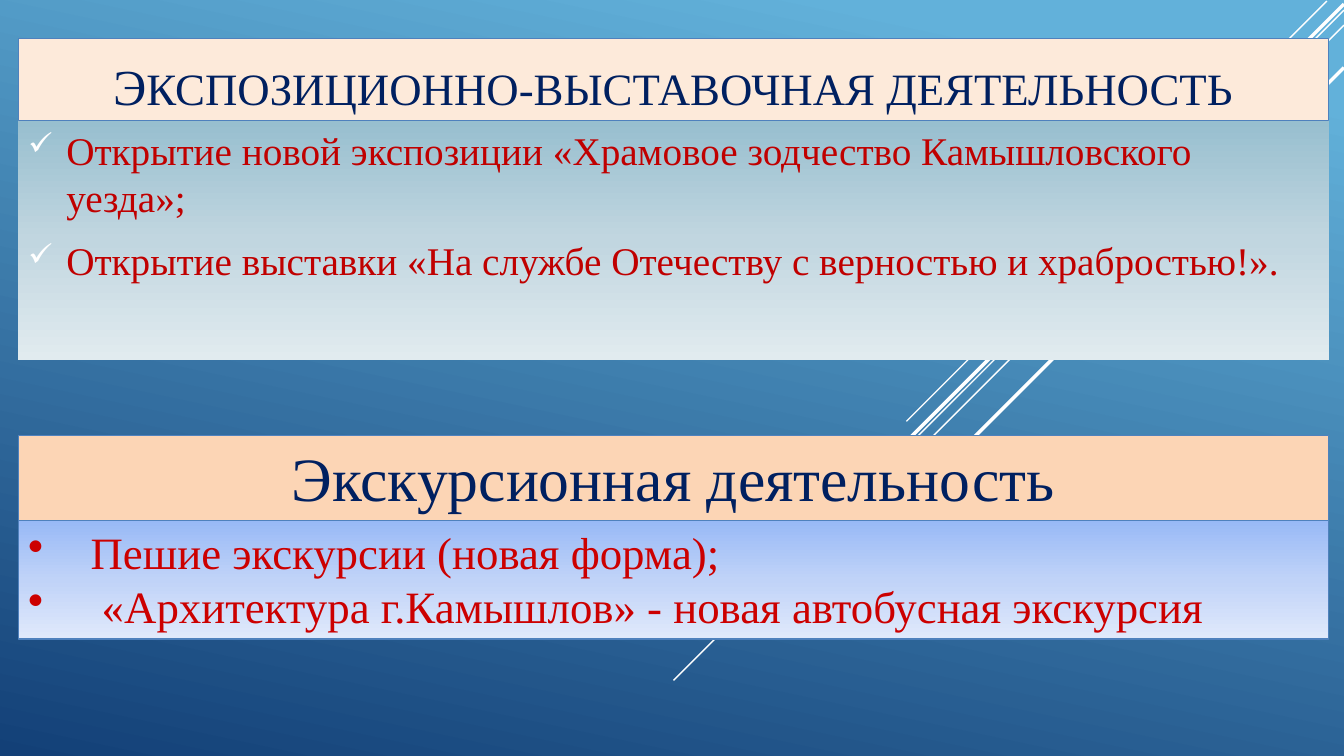
from dataclasses import dataclass

from lxml import etree
from pptx import Presentation
from pptx.dml.color import RGBColor
from pptx.enum.shapes import MSO_CONNECTOR, MSO_SHAPE
from pptx.enum.text import MSO_ANCHOR, PP_ALIGN
from pptx.oxml.ns import qn
from pptx.util import Inches, Pt

RECTANGLE = MSO_SHAPE.RECTANGLE
STRAIGHT = MSO_CONNECTOR.STRAIGHT
TOP, BOTTOM = MSO_ANCHOR.TOP, MSO_ANCHOR.BOTTOM
LEFT, CENTER = PP_ALIGN.LEFT, PP_ALIGN.CENTER

Stops = tuple[tuple[int, str], ...]


@dataclass(frozen=True)
class Theme:
    font: str = "Times New Roman"
    white: str = "FFFFFF"
    navy: str = "002060"
    dark_red: str = "C00000"
    red: str = "CC0000"
    border: str = "4F81BD"
    cream: Stops = ((0, "FDEADA"),)
    peach: Stops = ((0, "FCD5B5"),)
    teal: Stops = ((0, "98BFCF"), (50, "C1D6E0"), (100, "E1EBEF"))
    blue: Stops = ((0, "98B9F6"), (50, "C0D3F8"), (100, "E0E9FB"))
    backdrop: Stops = ((10, "62B1DA"), (100, "134077"))
    small: float = 28
    medium: float = 32
    initial: float = 36
    large: float = 44


THEME = Theme()


@dataclass(frozen=True)
class Ray:
    """A diagonal that falls to the left at 45 degrees."""
    x: float
    y: float
    run: float
    weight: float


@dataclass(frozen=True)
class Span:
    text: str
    size: float


@dataclass(frozen=True)
class Bullet:
    mark: str
    indent: float
    color: str
    percent: int = 100


@dataclass(frozen=True)
class Panel:
    top: float
    height: float
    fill: Stops
    color: str
    paragraphs: tuple[tuple[Span, ...], ...]
    border: bool = True
    anchor: MSO_ANCHOR = TOP
    align: PP_ALIGN = LEFT
    bullet: Bullet | None = None
    before: float = 0
    after: float = 0


PANEL_LEFT, PANEL_WIDTH = 0.18, 13

RAYS = (
    Ray(13.16, 0.01, 4.17, 1),
    Ray(13.33, 0.1, 6.65, 1),
    Ray(13.33, 0.25, 5.42, 1),
    Ray(13.33, 0.04, 5.3, 2.5),
    Ray(13.33, 0.67, 4.75, 2.5),
)

PANELS = (
    Panel(0.38, 0.82, THEME.cream, THEME.navy,
          ((Span("Э", THEME.initial),
            Span("КСПОЗИЦИОННО-ВЫСТАВОЧНАЯ ДЕЯТЕЛЬНОСТЬ", THEME.medium)),),
          anchor=BOTTOM, align=CENTER),
    Panel(1.2, 2.37, THEME.teal, THEME.dark_red,
          ((Span("Открытие новой экспозиции «Храмовое зодчество "
                 "Камышловского уезда»;", THEME.small),),
           (Span("Открытие выставки «На службе Отечеству с верностью "
                 "и храбростью!».", THEME.small),)),
          border=False, bullet=Bullet("✓", 0.38, THEME.white, 80),
          before=5.6, after=6),
    Panel(4.32, 0.84, THEME.peach, THEME.navy,
          ((Span("Экскурсионная деятельность", THEME.large),),),
          align=CENTER),
    Panel(5.16, 1.18, THEME.blue, THEME.red,
          ((Span("Пешие экскурсии (новая форма);", THEME.medium),),
           (Span(" «Архитектура г.Камышлов» - новая автобусная экскурсия",
                 THEME.medium),)),
          bullet=Bullet("•", 0.62, THEME.red)),
)


def rgb(color: str) -> RGBColor:
    return RGBColor.from_string(color)


def add_node(parent, tag: str, **attributes: str):
    return etree.SubElement(parent, qn(tag), attributes)


def paint(fill, element, stops: Stops, angle: float) -> None:
    """Fill with one colour, or with a gradient at a clockwise angle."""
    if len(stops) == 1:
        fill.solid()
        fill.fore_color.rgb = rgb(stops[0][1])
        return
    fill.gradient()
    fill.gradient_angle = 360 - angle
    stop_list = next(element.iter(qn("a:gsLst")))
    for old_stop in list(stop_list):
        stop_list.remove(old_stop)
    for position, color in stops:
        stop = add_node(stop_list, "a:gs", pos=str(position * 1000))
        add_node(stop, "a:srgbClr", val=color)


def draw_ray(page, ray: Ray) -> None:
    line = page.shapes.add_connector(
        STRAIGHT, Inches(ray.x), Inches(ray.y),
        Inches(ray.x - ray.run), Inches(ray.y + ray.run))
    line.line.color.rgb = rgb(THEME.white)
    line.line.width = Pt(ray.weight)
    add_node(line._element.spPr, "a:effectLst")


def set_bullet(para, bullet: Bullet) -> None:
    properties = para._p.get_or_add_pPr()
    properties.set("marL", str(Inches(bullet.indent)))
    properties.set("indent", str(-Inches(bullet.indent)))
    color = add_node(properties, "a:buClr")
    add_node(color, "a:srgbClr", val=bullet.color)
    add_node(properties, "a:buSzPct", val=str(bullet.percent * 1000))
    add_node(properties, "a:buChar", char=bullet.mark)


def write_paragraph(para, spans: tuple[Span, ...], panel: Panel) -> None:
    if panel.bullet:
        set_bullet(para, panel.bullet)
    para.alignment = panel.align
    para.space_before, para.space_after = Pt(panel.before), Pt(panel.after)
    para.font.name = THEME.font
    para.font.color.rgb = rgb(panel.color)
    para.font.size = Pt(spans[-1].size)
    for span in spans:
        run = para.add_run()
        run.text = span.text
        if span.size != spans[-1].size:
            run.font.size = Pt(span.size)


def draw_panel(page, panel: Panel) -> None:
    box = page.shapes.add_shape(
        RECTANGLE, Inches(PANEL_LEFT), Inches(panel.top),
        Inches(PANEL_WIDTH), Inches(panel.height))
    box.shadow.inherit = False
    paint(box.fill, box._element, panel.fill, 90)
    if panel.border:
        box.line.color.rgb = rgb(THEME.border)
        box.line.width = Pt(0.75)
    else:
        box.line.fill.background()
    frame = box.text_frame
    frame.word_wrap = True
    frame.vertical_anchor = panel.anchor
    for number, spans in enumerate(panel.paragraphs):
        para = frame.add_paragraph() if number else frame.paragraphs[0]
        write_paragraph(para, spans, panel)


def main() -> None:
    deck = Presentation()
    deck.slide_width, deck.slide_height = Inches(13.33), Inches(7.5)
    page = deck.slides.add_slide(deck.slide_layouts[6])

    # Backdrop with diagonal rays
    paint(page.background.fill, page._element, THEME.backdrop, 102)
    for ray in RAYS:
        draw_ray(page, ray)

    # Headings and their lists
    for panel in PANELS:
        draw_panel(page, panel)

    deck.save("out.pptx")


if __name__ == "__main__":
    main()
